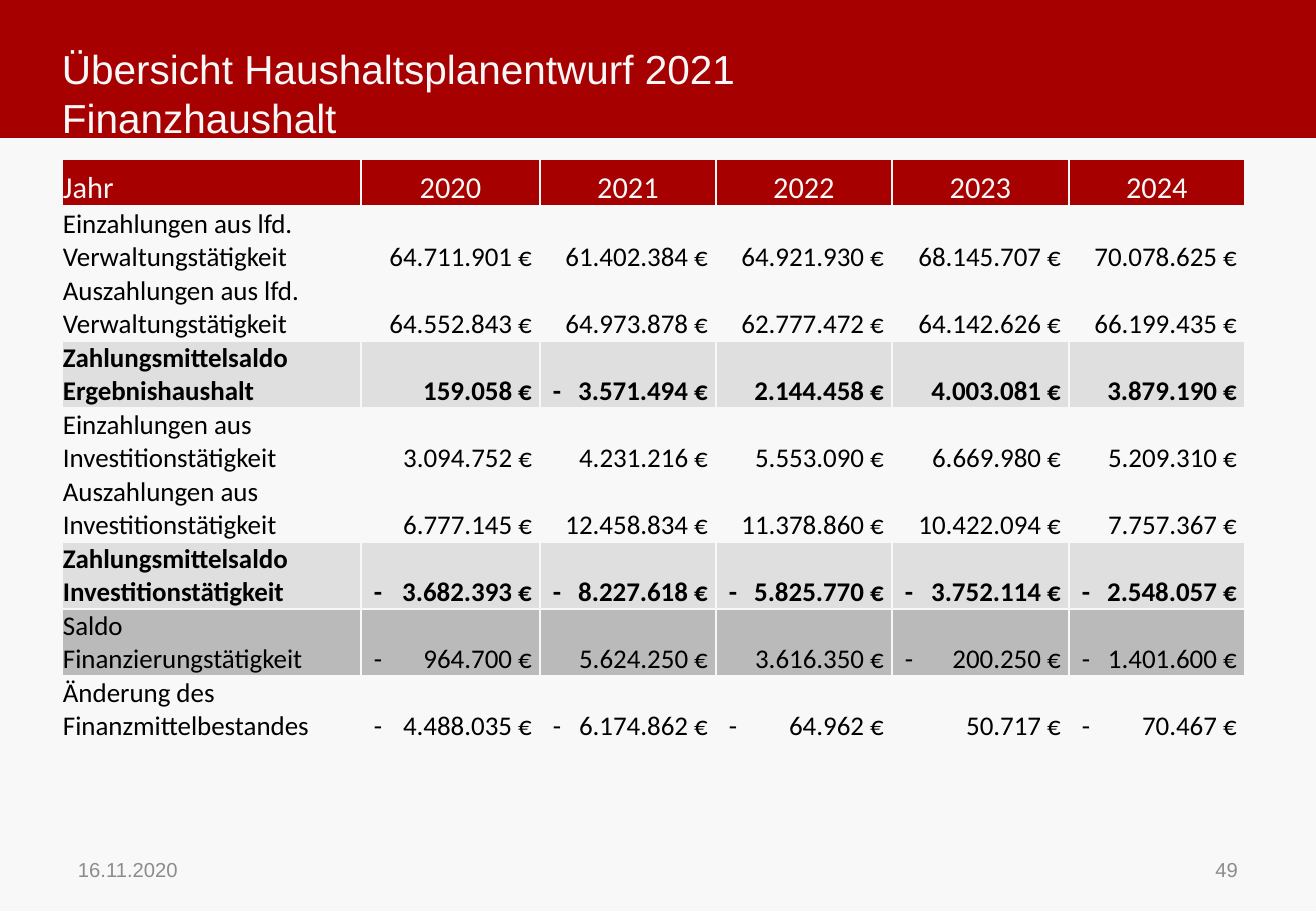
from lxml import etree
from pptx import Presentation
from pptx import util as u
from pptx.dml.color import RGBColor
from pptx.enum import shapes, text
from pptx.oxml import ns

SCALE = 7526
RED, PAPER, LIGHT, MID, GREY, BLACK = "A60000", "F8F8F8", "DFDFDF", "BABABA", "8C8C8C", "000000"
LEFT, CENTER, RIGHT = text.PP_ALIGN.LEFT, text.PP_ALIGN.CENTER, text.PP_ALIGN.RIGHT


def paint(fill, color):
    fill.solid()
    fill.fore_color.rgb = RGBColor.from_string(color)


def write(frame, words, align, color, **font):
    paragraph = frame.paragraphs[0]
    paragraph.text = words
    paragraph.alignment = align
    for run in paragraph.runs:
        paint(run.font.fill, color)
        for name, value in font.items():
            setattr(run.font, name, value)
    return paragraph


deck = Presentation()
deck.slide_width, deck.slide_height = 1316 * SCALE, 911 * SCALE
slide = deck.slides.add_slide(deck.slide_layouts[6])
paint(slide.background.fill, PAPER)

banner = slide.shapes.add_shape(shapes.MSO_SHAPE.RECTANGLE, 0, 0, 1316 * SCALE, 138 * SCALE)
banner.shadow.inherit = False
banner.line.fill.background()
paint(banner.fill, RED)

labels = [
    ("Übersicht Haushaltsplanentwurf 2021\vFinanzhaushalt", (62, 52, 1011, 82), 0, LEFT, PAPER, 24),
    ("16.11.2020", (66, 845, 307, 48), 12, LEFT, GREY, 12),
    ("49", (943, 845, 307, 48), 12, RIGHT, GREY, 12),
]
for words, place, inset, align, color, size in labels:
    frame = slide.shapes.add_textbox(*(n * SCALE for n in place)).text_frame
    layout = {"word_wrap": True, "vertical_anchor": text.MSO_ANCHOR.MIDDLE,
              "margin_left": inset * SCALE, "margin_right": inset * SCALE,
              "margin_top": 0, "margin_bottom": 0}
    for name, value in layout.items():
        setattr(frame, name, value)
    write(frame, words, align, color, name="Arial", size=u.Pt(size))

budget = [
    (RED, "Jahr", "2020", "2021", "2022", "2023", "2024"),
    (PAPER, "Einzahlungen aus lfd. Verwaltungstätigkeit",
     "64.711.901 €", "61.402.384 €", "64.921.930 €", "68.145.707 €", "70.078.625 €"),
    (PAPER, "Auszahlungen aus lfd. Verwaltungstätigkeit",
     "64.552.843 €", "64.973.878 €", "62.777.472 €", "64.142.626 €", "66.199.435 €"),
    (LIGHT, "Zahlungsmittelsaldo Ergebnishaushalt",
     "159.058 €", "-\t3.571.494 €", "2.144.458 €", "4.003.081 €", "3.879.190 €"),
    (PAPER, "Einzahlungen aus Investitionstätigkeit",
     "3.094.752 €", "4.231.216 €", "5.553.090 €", "6.669.980 €", "5.209.310 €"),
    (PAPER, "Auszahlungen aus Investitionstätigkeit",
     "6.777.145 €", "12.458.834 €", "11.378.860 €", "10.422.094 €", "7.757.367 €"),
    (LIGHT, "Zahlungsmittelsaldo Investitionstätigkeit",
     "-\t3.682.393 €", "-\t8.227.618 €", "-\t5.825.770 €", "-\t3.752.114 €", "-\t2.548.057 €"),
    (MID, "Saldo Finanzierungstätigkeit",
     "-\t964.700 €", "5.624.250 €", "3.616.350 €", "-\t200.250 €", "-\t1.401.600 €"),
    (PAPER, "Änderung des Finanzmittelbestandes",
     "-\t4.488.035 €", "-\t6.174.862 €", "-\t64.962 €", "50.717 €", "-\t70.467 €"),
]
widths = [299, 179, 176, 176, 177, 176]
heights = [48] + [67] * 8
table = slide.shapes.add_table(len(heights), len(widths), 62 * SCALE, 159 * SCALE,
                               sum(widths) * SCALE, sum(heights) * SCALE).table
for column, width in zip(table.columns, widths):
    column.width = width * SCALE
for row, height in zip(table.rows, heights):
    row.height = height * SCALE

for r, (shade, *entries) in enumerate(budget):
    for c, entry in enumerate(entries):
        cell = table.cell(r, c)
        header, negative = r == 0, "\t" in entry
        amount = c > 0 and not header
        layout = {"vertical_anchor": text.MSO_ANCHOR.BOTTOM,
                  "margin_left": (13 if negative else 1) * SCALE,
                  "margin_right": (8 if amount and not negative else 1) * SCALE,
                  "margin_top": SCALE, "margin_bottom": 0}
        for name, value in layout.items():
            setattr(cell, name, value)
        properties = cell._tc.get_or_add_tcPr()
        for side in "LRTB":
            weight = 3 if (r, side) in ((0, "B"), (1, "T")) else 1
            border = etree.SubElement(properties, ns.qn(f"a:ln{side}"), w=str(u.Pt(weight)))
            border_fill = etree.SubElement(border, ns.qn("a:solidFill"))
            etree.SubElement(border_fill, ns.qn("a:srgbClr"), val=PAPER)
        paint(cell.fill, shade)
        align = LEFT if c == 0 or negative else CENTER if header else RIGHT
        paragraph = write(cell.text_frame, entry, align, PAPER if header else BLACK,
                          name="Calibri", size=u.Pt(18 if header else 16), bold=shade == LIGHT)
        if negative:
            tabs = etree.SubElement(paragraph._p.get_or_add_pPr(), ns.qn("a:tabLst"))
            etree.SubElement(tabs, ns.qn("a:tab"), pos=str((widths[c] - 21) * SCALE), algn="r")

deck.save("out.pptx")
